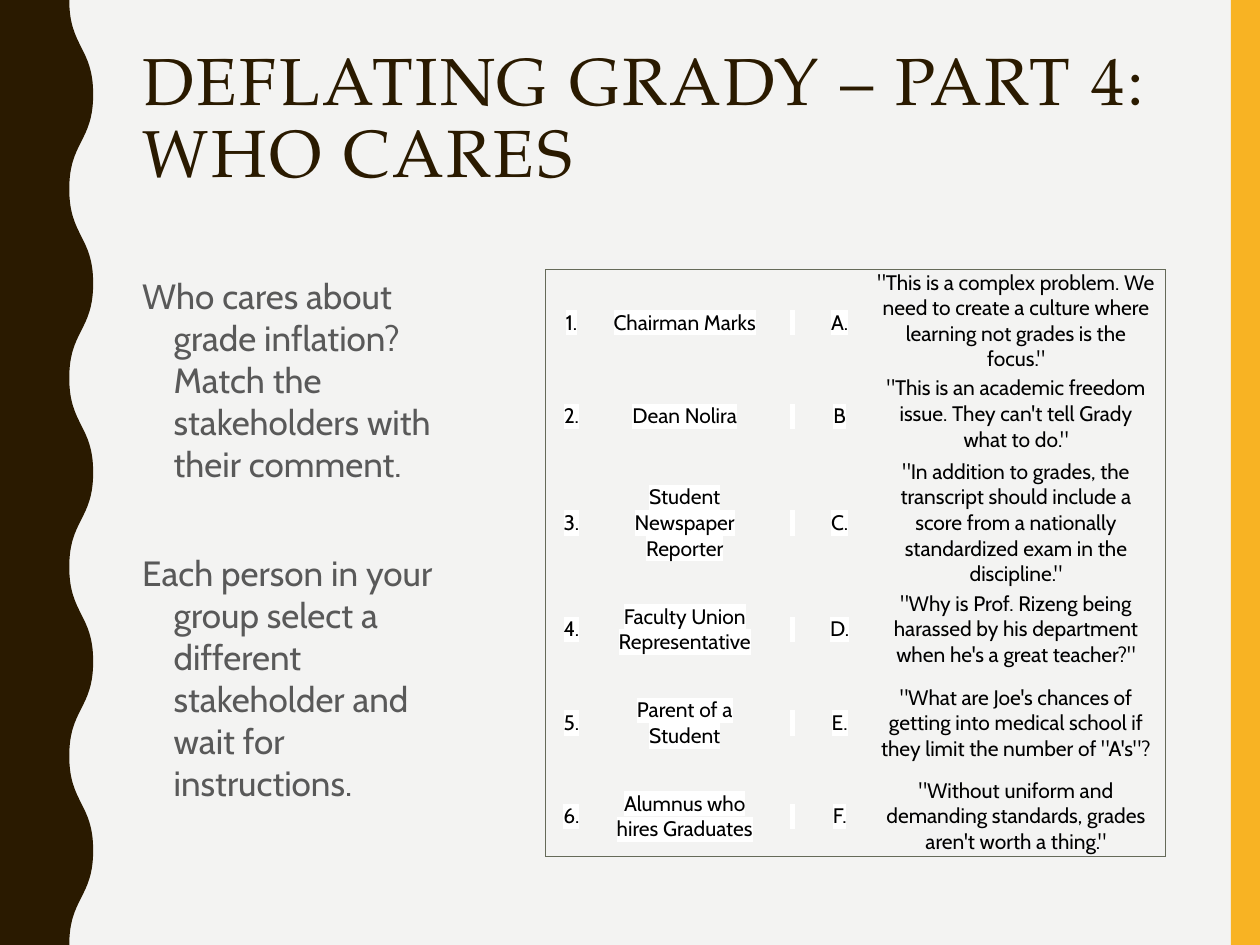
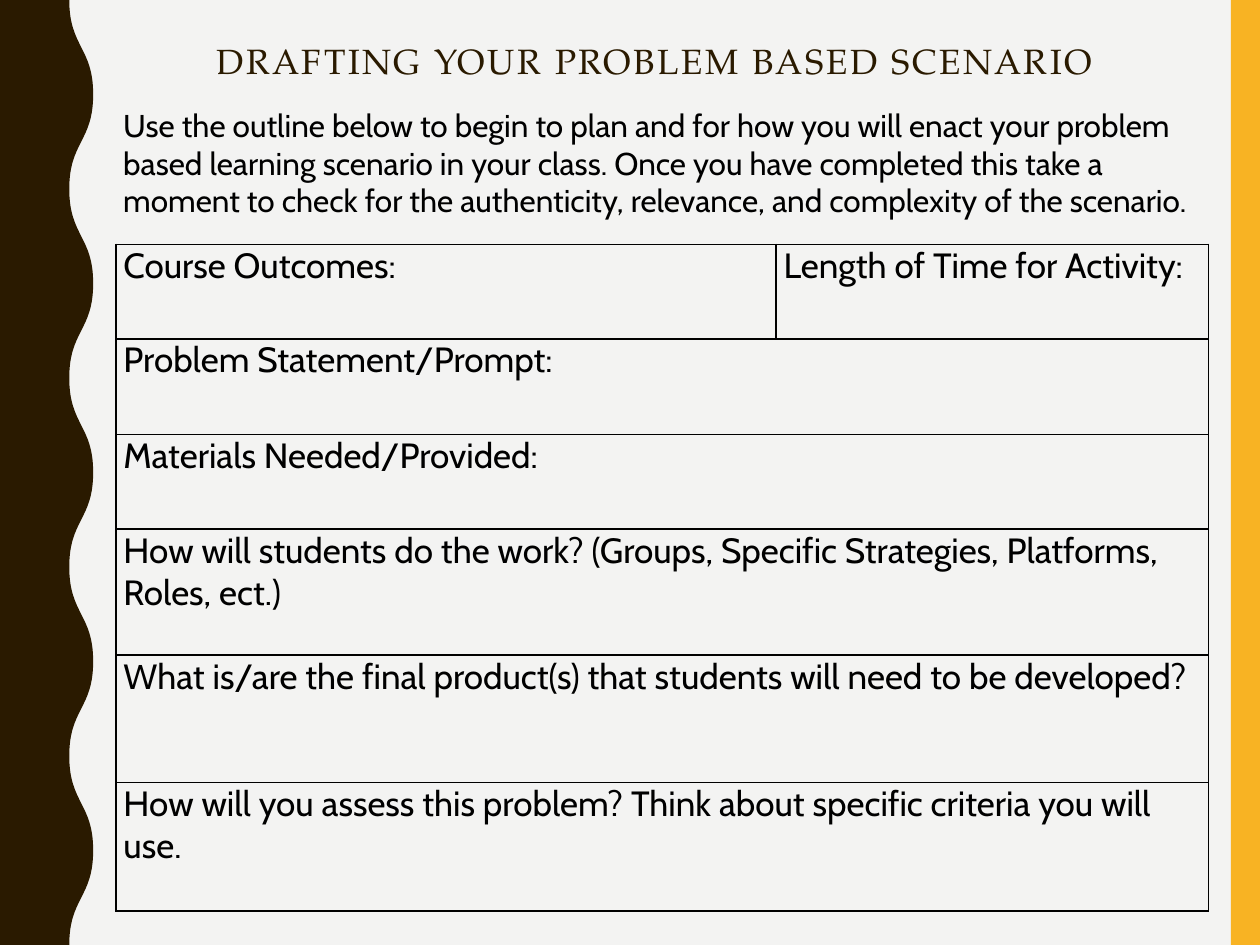
from dataclasses import dataclass

from lxml import etree
from pptx import Presentation
from pptx.dml.color import RGBColor
from pptx.enum import shapes, text
from pptx.oxml import ns
from pptx.util import Inches, Pt


@dataclass(frozen=True)
class Theme:
    paper: str = "F3F3F2"
    brown: str = "2A1A00"
    gold: str = "F8B323"
    grey: str = "595959"
    rule: str = "656A59"
    black: str = "000000"
    white: str = "FFFFFF"
    head_font: str = "TeX Gyre Pagella"
    body_font: str = "Cabin"
    title: int = 38
    large: int = 20
    medium: int = 18
    small: int = 12


THEME = Theme()
WIDTH, HEIGHT = 10, 7.5

# Content: matching exercise
MATCH_TITLE = "DEFLATING GRADY – PART 4: WHO CARES"
MATCH_INTRO = [
    "Who cares about grade inflation? \vMatch the stakeholders with their comment.",
    "Each person in your group select a different stakeholder and wait for instructions.",
]
MATCHES = [
    ("Chairman Marks", "A.",
     "\"This is a complex problem. We need to create a culture where learning "
     "not grades is the focus.\""),
    ("Dean Nolira", "B",
     "\"This is an academic freedom issue. They can't tell Grady what to do.\""),
    ("Student Newspaper Reporter", "C.",
     "\"In addition to grades, the transcript should include a score from a "
     "nationally standardized exam in the discipline.\""),
    ("Faculty Union Representative", "D.",
     "\"Why is Prof. Rizeng being harassed by his department when he's a great teacher?\""),
    ("Parent of a Student", "E.",
     "\"What are Joe's chances of getting into medical school if they limit "
     "the number of \"A's\"?"),
    ("Alumnus who hires Graduates", "F.",
     "\"Without uniform and demanding standards, grades aren't worth a thing.\""),
]
MATCH_COLS = [0.41, 1.39, 0.32, 0.43, 2.37]
MATCH_ROWS = [0.84, 0.65, 1.04, 0.65, 0.84, 0.64]
TOP_COMMENTS = 2  # the first comments sit at the top of their cells

# Content: planning outline
PLAN_TITLE = "DRAFTING YOUR PROBLEM BASED SCENARIO"
PLAN_INTRO = (
    "Use the outline below to begin to plan and for how you will enact your problem "
    "based learning scenario in your class. Once you have completed this take a moment "
    "to check for the authenticity, relevance, and complexity of the scenario."
)
PLAN = [
    ("Course Outcomes:", "Length of Time for Activity:"),
    ("Problem Statement/Prompt:",),
    ("Materials Needed/Provided:",),
    ("How will students do the work? (Groups, Specific Strategies, Platforms, Roles, ect.)",),
    ("What is/are the final product(s) that students will need to be developed?",),
    ("How will you assess this problem? Think about specific criteria you will use.",),
]
PLAN_COLS = [5.24, 3.43]
PLAN_ROWS = [0.75, 0.76, 0.75, 1, 1.01, 1.02]


def rgb(color):
    return RGBColor.from_string(color)


def inches(values):
    return [Inches(v) for v in values]


def style(p, size, color, font=THEME.body_font, align=None):
    p.alignment = align
    for r in p.runs:
        r.font.size, r.font.name = Pt(size), font
        r.font.color.rgb = rgb(color)


def highlight(p, color):
    for r in p.runs:
        mark = etree.Element(ns.qn("a:highlight"))
        etree.SubElement(mark, ns.qn("a:srgbClr"), val=color)
        r.font._element.find(ns.qn("a:solidFill")).addnext(mark)


# Shared look: background, gold band and wavy edge on the master
def paint(sp, color):
    sp.shadow.inherit = False
    sp.fill.solid()
    sp.fill.fore_color.rgb = rgb(color)
    sp.line.fill.background()


def add_wave(s, inner=0.55, outer=0.74, half=0.75):
    count = round(HEIGHT / half)
    turns = [inches((outer if i % 2 else inner, half * i)) for i in range(count + 1)]
    builder = s.shapes.build_freeform(*turns[0])
    builder.add_line_segments([*turns[1:], (0, Inches(HEIGHT)), (0, 0)])
    wave = builder.convert_to_shape()
    # Bend the straight pieces between turns into curves
    lines = list(wave.element.iter(ns.qn("a:lnTo")))
    for line, (x0, y0), (x1, y1) in zip(lines, turns, turns[1:]):
        middle = (y0 + y1) // 2
        curve = etree.Element(ns.qn("a:cubicBezTo"))
        for x, y in ((x0, middle), (x1, middle), (x1, y1)):
            etree.SubElement(curve, ns.qn("a:pt"), x=str(x), y=str(y))
        line.getparent().replace(line, curve)
    return wave


def decorate_master(prs, s):
    master = prs.slide_master
    master.background.fill.solid()
    master.background.fill.fore_color.rgb = rgb(THEME.paper)
    band = s.shapes.add_shape(shapes.MSO_SHAPE.RECTANGLE,
                              *inches((9.77, 0, 0.23, HEIGHT)))
    wave = add_wave(s)
    paint(band, THEME.gold)
    paint(wave, THEME.brown)
    for i, sp in enumerate((band, wave)):
        master.shapes.element.insert(2 + i, sp.element)


def add_title(s, words, box, size, align=text.PP_ALIGN.LEFT):
    sp = s.shapes.title
    sp.left, sp.top, sp.width, sp.height = inches(box)
    tf = sp.text_frame
    tf.text = words
    tf.auto_size = text.MSO_AUTO_SIZE.NONE
    tf.vertical_anchor = text.MSO_ANCHOR.TOP
    p = tf.paragraphs[0]
    p.line_spacing = 0.9
    style(p, size, THEME.brown, THEME.head_font, align)
    for r in p.runs:
        r.font._element.set("spc", "150")


def add_text(s, paragraphs, box, size, color):
    tf = s.shapes.add_textbox(*inches(box)).text_frame
    tf.word_wrap = True
    for i, words in enumerate(paragraphs):
        p = tf.paragraphs[0] if i == 0 else tf.add_paragraph()
        p.text = words
        style(p, size, color)
    return tf


# Tables
def set_borders(cell, sides, color, width):
    tc_pr = cell._tc.get_or_add_tcPr()
    for i, side in enumerate("LRTB"):
        ln = etree.Element(ns.qn(f"a:ln{side}"), w=str(Pt(width)))
        if side in sides:
            fill = etree.SubElement(ln, ns.qn("a:solidFill"))
            etree.SubElement(fill, ns.qn("a:srgbClr"), val=color)
        else:
            etree.SubElement(ln, ns.qn("a:noFill"))
        tc_pr.insert(i, ln)


def add_table(s, left, top, cols, rows, inset):
    table = s.shapes.add_table(len(rows), len(cols),
                               *inches((left, top, sum(cols), sum(rows)))).table
    table.first_row = table.horz_banding = False
    for col, width in zip(table.columns, cols):
        col.width = Inches(width)
    for row, height in zip(table.rows, rows):
        row.height = Inches(height)
    for cell in table.iter_cells():
        cell.fill.background()
        cell.margin_left = cell.margin_right = Inches(inset)
        cell.margin_top = cell.margin_bottom = 0
    return table


def outer_sides(i, j, rows, cols):
    edges = {"L": j == 0, "R": j == cols - 1, "T": i == 0, "B": i == rows - 1}
    return [side for side, on_edge in edges.items() if on_edge]


def fill_match_table(table):
    last = len(MATCH_COLS) - 1
    for i, (person, letter, comment) in enumerate(MATCHES):
        for j, words in enumerate((f"{i + 1}.", person, " ", letter, comment)):
            cell = table.cell(i, j)
            cell.text_frame.text = words
            at_top = j == last and i < TOP_COMMENTS
            cell.vertical_anchor = (text.MSO_ANCHOR.TOP if at_top
                                    else text.MSO_ANCHOR.MIDDLE)
            p = cell.text_frame.paragraphs[0]
            style(p, THEME.small, THEME.black, align=text.PP_ALIGN.CENTER)
            if j < last:
                highlight(p, THEME.white)
            set_borders(cell, outer_sides(i, j, len(MATCHES), last + 1), THEME.rule, 0.5)


def fill_plan_table(table):
    for cell in table.iter_cells():
        set_borders(cell, "LRTB", THEME.black, 1)
    for i, prompts in enumerate(PLAN):
        if len(prompts) == 1:
            table.cell(i, 0).merge(table.cell(i, 1))
        for j, words in enumerate(prompts):
            tf = table.cell(i, j).text_frame
            tf.text = words
            style(tf.paragraphs[0], THEME.large, THEME.black)


# Slides
def build_match_slide(s):
    add_title(s, MATCH_TITLE, (1.03, 0.33, 8.22, 1.79), THEME.title)
    tf = add_text(s, MATCH_INTRO, (1.03, 2.13, 2.78, 4.31), THEME.large, THEME.grey)
    for p, gap in zip(tf.paragraphs, (7, 38)):
        p.space_before = Pt(gap)
        p_pr = p._p.get_or_add_pPr()
        p_pr.set("marL", str(Inches(0.25)))
        p_pr.set("indent", str(-Inches(0.25)))
    fill_match_table(add_table(s, 4.33, 2.14, MATCH_COLS, MATCH_ROWS, 0.08))


def build_plan_slide(s):
    add_title(s, PLAN_TITLE, (1.02, 0.3, 8.35, 0.5), THEME.large, text.PP_ALIGN.CENTER)
    fill_plan_table(add_table(s, 0.92, 1.94, PLAN_COLS, PLAN_ROWS, 0.06))
    add_text(s, [PLAN_INTRO], (0.88, 0.79, 8.67, 1.01), THEME.medium, THEME.black)


def main():
    prs = Presentation()
    prs.slide_width, prs.slide_height = inches((WIDTH, HEIGHT))
    title_only = prs.slide_layouts[5]
    for i, build in enumerate((build_match_slide, build_plan_slide)):
        s = prs.slides.add_slide(title_only)
        if i == 0:
            decorate_master(prs, s)
        build(s)
    prs.save("out.pptx")


if __name__ == "__main__":
    main()
